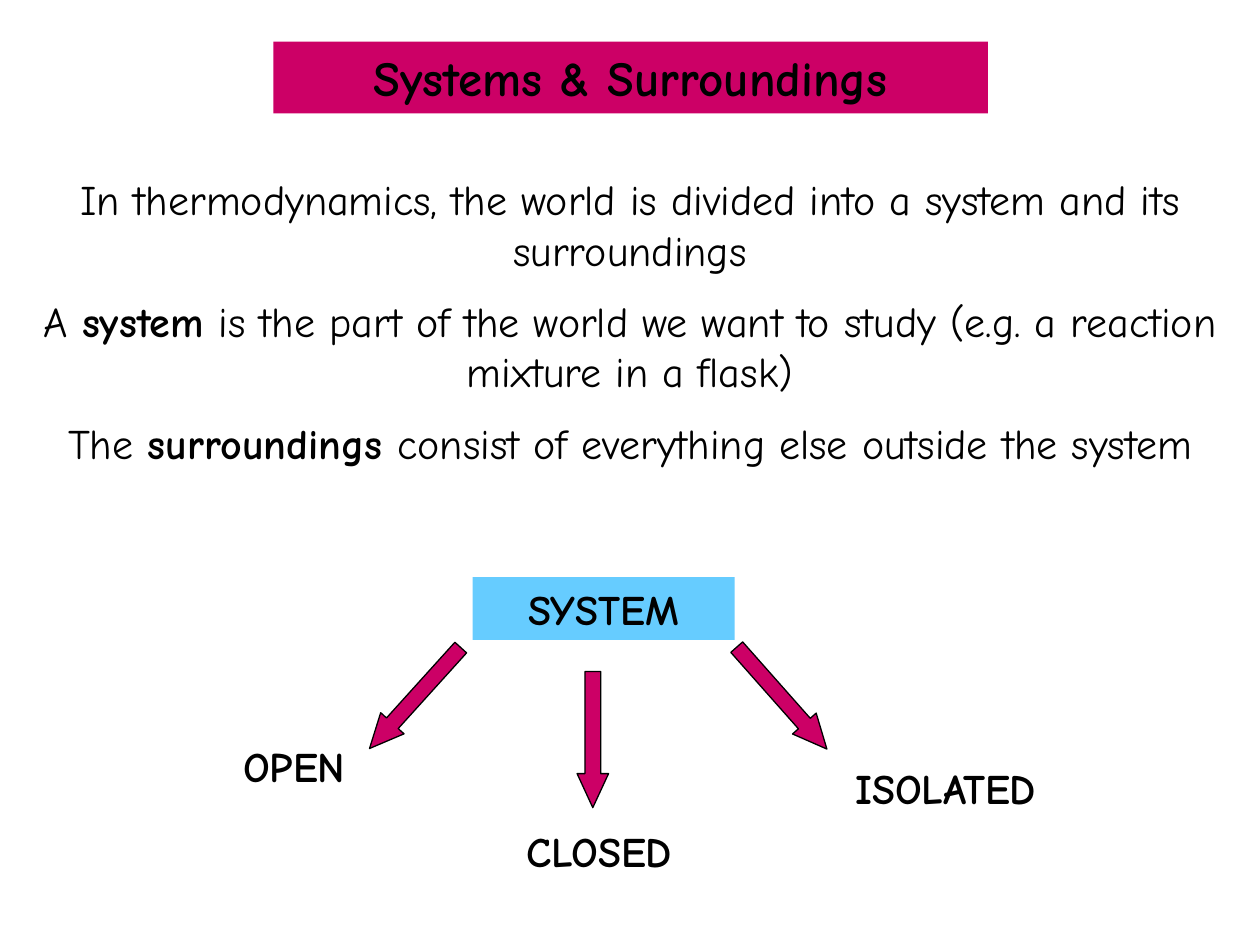
from pptx import Presentation
from pptx import util as u
from pptx.dml.color import RGBColor
from pptx.enum import shapes, text

PINK, BLUE, BLACK = "CC0066", "66CCFF", "000000"


def rgb(value):
    return RGBColor.from_string(value)


def add_text(parent, box, paragraphs, size=24, fill=None):
    """Centred text; each paragraph is a list of (words, bold) runs."""
    box = [u.Inches(v) for v in box]
    if fill:
        sp = parent.add_shape(shapes.MSO_SHAPE.RECTANGLE, *box)
        sp.shadow.inherit = False
        sp.fill.solid()
        sp.fill.fore_color.rgb = rgb(fill)
        sp.line.fill.background()
    else:
        sp = parent.add_textbox(*box)
    tf = sp.text_frame
    tf.word_wrap = True
    tf.auto_size = text.MSO_AUTO_SIZE.SHAPE_TO_FIT_TEXT
    tf.vertical_anchor = text.MSO_ANCHOR.TOP
    for i, runs in enumerate(paragraphs):
        p = tf.add_paragraph() if i else tf.paragraphs[0]
        p.alignment = text.PP_ALIGN.CENTER
        if i:
            p.space_before = u.Pt(size / 2)
        for words, bold in runs:
            r = p.add_run()
            r.text = words
            r.font.name = "Comic Neue"
            r.font.size = u.Pt(size)
            r.font.bold = bold
            r.font.color.rgb = rgb(BLACK)


prs = Presentation()
prs.slide_width, prs.slide_height = u.Inches(10), u.Inches(7.5)
s = prs.slides.add_slide(prs.slide_layouts[6])

# Title bar
add_text(s.shapes, (2.17, 0.33, 5.67, 0.57),
         [[("Systems & Surroundings", True)]], size=28, fill=PINK)

# Definitions
add_text(s.shapes, (0, 1.33, 10, 2.9), [
    [("In thermodynamics, the world is divided into a system and its "
      "surroundings", False)],
    [("A ", False), ("system ", True),
     ("is the part of the world we want to study (e.g. a reaction mixture "
      "in a flask)", False)],
    [("The ", False), ("surroundings ", True),
     ("consist of everything else outside the system", False)],
])

# Diagram: system box and its three kinds
diagram = s.shapes.add_group_shape().shapes
add_text(diagram, (3.75, 4.58, 2.08, 0.5), [[("SYSTEM", True)]], fill=BLUE)
for label, left, top in (("CLOSED", 3.42, 6.5),
                         ("OPEN", 1, 5.83),
                         ("ISOLATED", 6.17, 6)):
    add_text(diagram, (left, top, 2.67, 0.5), [[(label, True)]])

# Arrows from the system to each kind
for left, top, angle in ((4.58, 5.33, 0), (3.17, 5, 42.1), (6.08, 5, 318.5)):
    sp = diagram.add_shape(shapes.MSO_SHAPE.DOWN_ARROW, u.Inches(left),
                           u.Inches(top), u.Inches(0.25), u.Inches(1.08))
    sp.rotation = angle
    sp.adjustments[0], sp.adjustments[1] = 0.5, 1.08
    sp.shadow.inherit = False
    sp.fill.solid()
    sp.fill.fore_color.rgb = rgb(PINK)
    sp.line.color.rgb = rgb(BLACK)
    sp.line.width = u.Pt(0.75)

prs.save("out.pptx")
